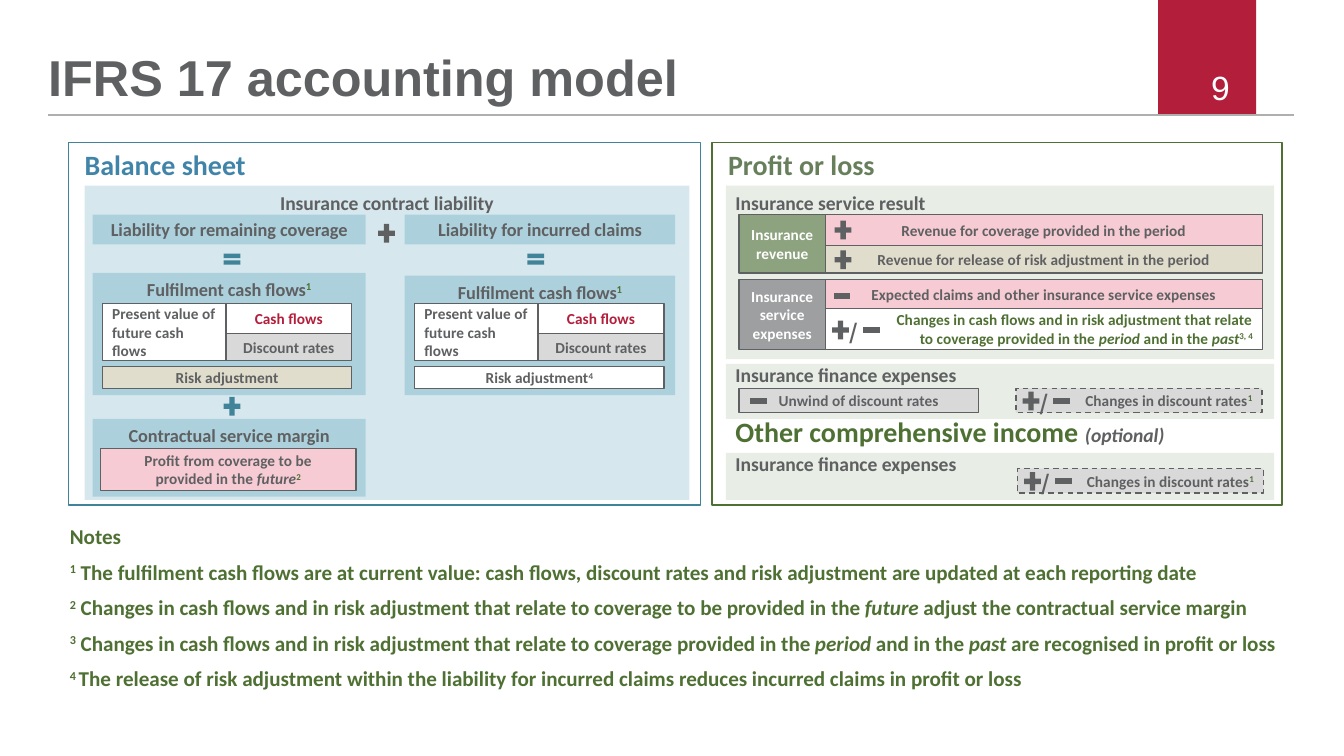
import pptx
import pptx.util
import pptx.dml.color
import pptx.enum.dml
import pptx.enum.shapes
import pptx.enum.text
import pptx.oxml

Cm = pptx.util.Cm
Pt = pptx.util.Pt
SHAPE = pptx.enum.shapes.MSO_SHAPE
ALIGN = pptx.enum.text.PP_ALIGN
ANCHOR = pptx.enum.text.MSO_ANCHOR

GREY, SILVER, WHITE = "5F6062", "D9D9D9", "FFFFFF"
RED, PINK, SAND = "B31E3B", "F6CBD4", "E1DDCC"
TEAL, BLUE, PALE_BLUE = "418499", "ADD1DC", "D6E8EE"
GREEN, PALE_GREEN = "4F7033", "E8EDE6"


def colour(value):
    """Turn a hex string into a colour."""
    return pptx.dml.color.RGBColor.from_string(value)


def place(box, left, top, width, height):
    """Return a box whose corner is measured from the corner of another."""
    return box[0] + left, box[1] + top, width, height


def format_run(run, size, color, bold=True, font="Calibri"):
    """Set the face of a run."""
    run.font.name, run.font.size, run.font.bold = font, Pt(size), bold
    run.font.color.rgb = colour(color)


def write(shape, text, size=8.25, color=GREY, align=ALIGN.CENTER, anchor=ANCHOR.MIDDLE,
          spacing=None, note=GREEN, left=0.18, bold=True, font="Calibri"):
    """Write lines of text, with *italic* and ^superscript^ marks."""
    frame = shape.text_frame
    frame.word_wrap = True
    frame.vertical_anchor = anchor
    frame.margin_left, frame.margin_right = Cm(left), Cm(0.18)
    frame.margin_top = frame.margin_bottom = Cm(0.1)
    for index, line in enumerate(text.split("\n")):
        para = frame.add_paragraph() if index else frame.paragraphs[0]
        para.alignment = align
        if spacing:
            para.line_spacing = spacing
        for raised, part in enumerate(line.split("^")):
            for slanted, words in enumerate(part.split("*")):
                if words:
                    run = para.add_run()
                    run.text = words
                    format_run(run, size, note if raised % 2 else color, bold, font)
                    run.font.italic = bool(slanted % 2)
                    if raised % 2:
                        run.font._element.set("baseline", "30000")


def add_box(page, box, fill, text="", line=None, dashed=False, kind=SHAPE.RECTANGLE, **style):
    """Add a filled shape, with text where given."""
    shape = page.shapes.add_shape(kind, *map(Cm, box))
    shape.shadow.inherit = False
    shape.fill.solid()
    shape.fill.fore_color.rgb = colour(fill)
    if line:
        shape.line.color.rgb = colour(line)
        shape.line.width = Pt(0.75)
        if dashed:
            shape.line.dash_style = pptx.enum.dml.MSO_LINE.DASH
    else:
        shape.line.fill.background()
    if text:
        write(shape, text, **style)
    return shape


def add_text(page, box, text, **style):
    """Add a text box."""
    label = page.shapes.add_textbox(*map(Cm, box))
    write(label, text, **style)
    return label


def add_sign(page, box, left, top, kind, color=GREY, height=0.48):
    """Add a plus, minus or equal sign."""
    add_box(page, place(box, left, top, 0.43, height), color, kind=kind)


def add_plus_minus(page, box, left, top):
    """Add a plus, a slash and a minus in a row."""
    add_sign(page, box, left, top, SHAPE.MATH_PLUS)
    add_sign(page, box, left + 0.58, top, SHAPE.MATH_MINUS)
    slash = add_text(page, place(box, left + 0.23, top - 0.17, 0.45, 0.89), "/",
                     size=15, bold=False, font="Arial")
    slash.text_frame.margin_left = slash.text_frame.margin_right = 0


def add_header(page, box):
    """Add the red block, rule, page number and title."""
    add_box(page, place(box, 20.98, 0, 1.85, 2.18), RED)
    left, top, width, height = box
    rule = page.shapes.add_connector(
        pptx.enum.shapes.MSO_CONNECTOR.STRAIGHT,
        Cm(left), Cm(top + height), Cm(left + width), Cm(top + height))
    rule.line.color.rgb = colour("AFAFB0")
    rule.line.width = Pt(1.2)
    rule._element.spPr.append(pptx.oxml.parse_xml(
        '<a:effectLst xmlns:a="http://schemas.openxmlformats.org/drawingml/2006/main"/>'))
    add_text(page, place(box, 16.59, 1.27, 5.92, 0.76), "9", size=18, color=WHITE,
             align=ALIGN.RIGHT, bold=False, font="Arial", left=0.23)
    title = page.shapes.title
    title.left, title.top, title.width, title.height = map(Cm, place(box, 0, 0, 19.86, 2.03))
    write(title, "IFRS 17 accounting model", size=27, align=ALIGN.LEFT,
          anchor=ANCHOR.BOTTOM, spacing=0.9, left=0, font="Arial")
    frame = title.text_frame
    frame.auto_size = pptx.enum.text.MSO_AUTO_SIZE.NONE
    frame.margin_right = frame.margin_top = frame.margin_bottom = 0


def add_liability(page, box, name, top, sign_left, risk, risk_fill):
    """Add a column that splits one liability into its cash flows."""
    width = box[2]
    add_box(page, place(box, 0, 0, width, 0.56), BLUE, name, size=9.75)
    add_sign(page, box, sign_left, 0.66, SHAPE.MATH_EQUAL, TEAL, 0.36)
    add_box(page, place(box, 0, top, width, 3.41 - top), BLUE, "Fulfilment cash flows^1^",
            size=9.75, anchor=ANCHOR.TOP)
    add_box(page, place(box, 0.19, 1.68, 2.33, 1.08), WHITE,
            "Present value of future cash flows", GREY, align=ALIGN.LEFT)
    add_box(page, place(box, 2.52, 1.68, 2.38, 0.57), WHITE, "Cash flows", GREY, color=RED)
    add_box(page, place(box, 2.52, 2.25, 2.38, 0.51), SILVER, "Discount rates", GREY)
    add_box(page, place(box, 0.19, 2.87, 4.71, 0.42), risk_fill, risk, GREY, note=GREY)


def add_balance_sheet(page, box):
    """Add the balance sheet panel."""
    add_box(page, box, WHITE, "Balance sheet", TEAL, size=15, color="4184A9",
            align=ALIGN.LEFT, anchor=ANCHOR.TOP, left=0.3)
    add_box(page, place(box, 0.3, 0.82, 11.43, 5.94), PALE_BLUE,
            "Insurance contract liability", size=10.5, anchor=ANCHOR.TOP)
    add_liability(page, place(box, 0.45, 1.37, 5.16, 3.41), "Liability for remaining coverage",
                  1.1, 2.42, "Risk adjustment", SAND)
    add_liability(page, place(box, 6.35, 1.37, 5.11, 3.41), "Liability for incurred claims",
                  1.15, 2.26, "Risk adjustment^4^", WHITE)
    add_sign(page, box, 5.79, 1.48, SHAPE.MATH_PLUS)
    add_sign(page, box, 2.87, 4.75, SHAPE.MATH_PLUS, TEAL)
    add_box(page, place(box, 0.45, 5.23, 5.16, 1.47), BLUE, "Contractual service margin",
            size=9.75, anchor=ANCHOR.TOP)
    add_box(page, place(box, 0.6, 5.79, 4.83, 0.79), PINK,
            "Profit from coverage to be\nprovided in the *future*^2^", GREY)


def add_rate_changes(page, box, left, top):
    """Add the dashed box on changes in discount rates."""
    add_box(page, place(box, left, top, 4.65, 0.46), SILVER, "Changes in discount rates^1^",
            GREY, dashed=True, align=ALIGN.RIGHT)
    add_plus_minus(page, box, left + 0.07, top)


def add_profit_or_loss(page, box):
    """Add the profit or loss panel with other comprehensive income."""
    heading = dict(size=10.5, align=ALIGN.LEFT, anchor=ANCHOR.TOP)
    add_box(page, box, WHITE, "Profit or loss", GREEN, size=15, color="687F5C",
            align=ALIGN.LEFT, anchor=ANCHOR.TOP, left=0.3)
    add_box(page, place(box, 0.26, 0.82, 10.36, 3.28), PALE_GREEN,
            "Insurance service result", **heading)
    for top, height in ((4.19, 1.04), (5.87, 0.89)):
        add_box(page, place(box, 0.26, top, 10.36, height), PALE_GREEN,
                "Insurance finance expenses", spacing=Pt(9), **heading)
    for top, height, fill, text in (
            (1.37, 1.1, "8DA380", "Insurance revenue"),
            (2.59, 1.33, "9E9FA1", "Insurance service expenses")):
        add_box(page, place(box, 0.51, top, 1.63, height), fill, text, GREY, color=WHITE)
    for top, height, fill, text in (
            (1.37, 0.58, PINK, "Revenue for coverage provided in the period"),
            (1.95, 0.52, SAND, "Revenue for release of risk adjustment in the period"),
            (2.59, 0.55, PINK, "Expected claims and other insurance service expenses")):
        add_box(page, place(box, 2.14, top, 8.26, height), fill, text, GREY)
    add_box(page, place(box, 2.14, 3.14, 8.26, 0.78), WHITE,
            "Changes in cash flows and in risk adjustment that relate\n"
            "to coverage provided in the *period* and in the *past*^3, 4^",
            GREY, color=GREEN, align=ALIGN.RIGHT)
    add_sign(page, box, 2.26, 1.42, SHAPE.MATH_PLUS)
    add_sign(page, box, 2.26, 1.98, SHAPE.MATH_PLUS)
    add_sign(page, box, 2.24, 2.67, SHAPE.MATH_MINUS)
    add_plus_minus(page, box, 2.21, 3.31)
    add_box(page, place(box, 0.51, 4.65, 4.52, 0.46), SILVER, "Unwind of discount rates", GREY)
    add_sign(page, box, 0.66, 4.65, SHAPE.MATH_MINUS)
    add_rate_changes(page, box, 5.74, 4.65)
    add_rate_changes(page, box, 5.77, 6.17)
    income = add_text(page, place(box, 0.26, 5.26, 8.79, 0.69),
                      "Other comprehensive income *(optional)*", size=15, color=GREEN,
                      align=ALIGN.LEFT, spacing=Pt(10.5))
    format_run(income.text_frame.paragraphs[0].runs[-1], 10.5, GREY)


def add_notes(page, box):
    """Add the notes, one line each at equal steps."""
    notes = (
        "Notes",
        "^1^ The fulfilment cash flows are at current value: cash flows, discount rates "
        "and risk adjustment are updated at each reporting date",
        "^2^ Changes in cash flows and in risk adjustment that relate to coverage to be "
        "provided in the *future* adjust the contractual service margin",
        "^3^ Changes in cash flows and in risk adjustment that relate to coverage provided "
        "in the *period* and in the *past* are recognised in profit or loss",
        "^4 ^The release of risk adjustment within the liability for incurred claims "
        "reduces incurred claims in profit or loss")
    step = box[3] / len(notes)
    for index, note in enumerate(notes):
        add_text(page, place(box, 0, index * step, box[2], 0.56), note, size=11.25,
                 color=GREEN, align=ALIGN.LEFT)


def main():
    """Build the slide and save the deck."""
    deck = pptx.Presentation()
    deck.slide_width, deck.slide_height = Cm(25.4), Cm(14.29)
    page = deck.slides.add_slide(deck.slide_layouts[5])
    add_header(page, (0.91, 0, 23.55, 2.18))
    add_balance_sheet(page, (1.3, 2.69, 11.94, 6.86))
    add_profit_or_loss(page, (13.46, 2.69, 10.77, 6.86))
    add_notes(page, (1.14, 9.86, 24.16, 3.35))
    deck.save("out.pptx")


if __name__ == "__main__":
    main()
